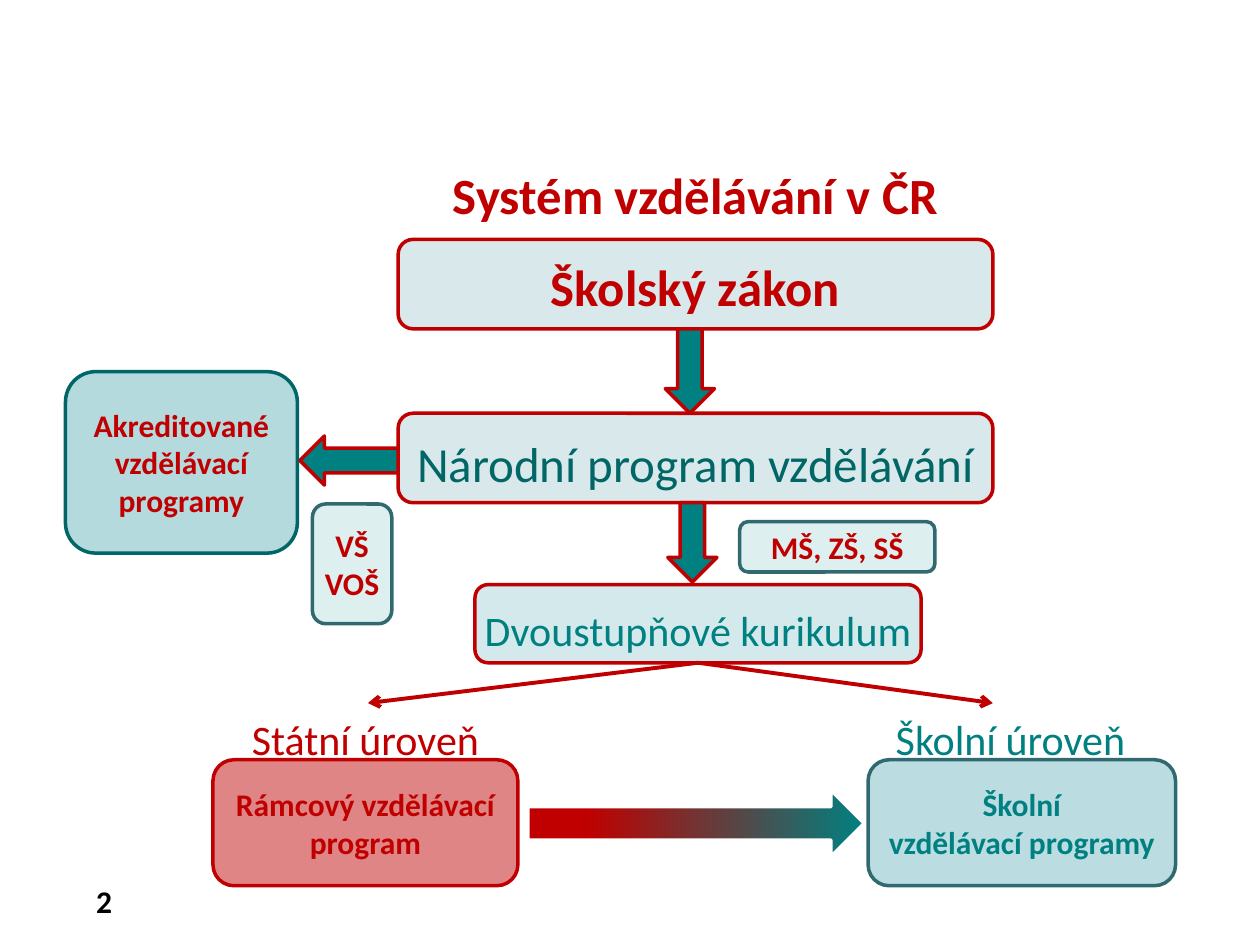
from dataclasses import dataclass

import pptx
import pptx.dml.color
import pptx.enum.shapes
import pptx.enum.text
import pptx.oxml
import pptx.oxml.ns
import pptx.util
from pptx.util import Inches

SHAPE = pptx.enum.shapes.MSO_SHAPE
ALIGN = pptx.enum.text.PP_ALIGN
ANCHOR = pptx.enum.text.MSO_ANCHOR


@dataclass(frozen=True)
class Theme:
    font: str = "Calibri"
    red: str = "C00000"
    teal: str = "008080"
    dark_teal: str = "006666"
    slate: str = "30696F"
    steel: str = "418E96"
    aqua: str = "71B9C1"
    pale: str = "B4DADE"
    white: str = "FFFFFF"
    black: str = "000000"
    title: int = 29
    program: int = 28
    level: int = 24
    body: int = 18
    border: float = 2
    branch: float = 2.25


THEME = Theme()


def rgb(color):
    return pptx.dml.color.RGBColor.from_string(color)


def write(frame, text, size, color, bold=True, align=ALIGN.CENTER, top=0):
    """Fill a frame with one paragraph per line of text."""
    frame.word_wrap = True
    frame.vertical_anchor = ANCHOR.MIDDLE
    frame.margin_left = frame.margin_right = frame.margin_bottom = 0
    frame.margin_top = Inches(top)
    for number, line in enumerate(text.split("\n")):
        para = frame.add_paragraph() if number else frame.paragraphs[0]
        para.text = line
        para.alignment = align
        para.font.name = THEME.font
        para.font.size = pptx.util.Pt(size)
        para.font.bold = bold
        para.font.color.rgb = rgb(color)


def add_label(page, box, text, size, color, **style):
    label = page.shapes.add_textbox(*map(Inches, box))
    write(label.text_frame, text, size, color, **style)


def add_figure(page, kind, box, fill, line, opacity=100):
    """Add a bordered preset shape; opacity is in percent."""
    figure = page.shapes.add_shape(kind, *map(Inches, box))
    figure.shadow.inherit = False
    figure.fill.solid()
    figure.fill.fore_color.rgb = rgb(fill)
    if opacity < 100:
        color = figure.fill._xPr.find(".//" + pptx.oxml.ns.qn("a:srgbClr"))
        alpha = color.makeelement(pptx.oxml.ns.qn("a:alpha"), {"val": str(opacity * 1000)})
        color.append(alpha)
    figure.line.color.rgb = rgb(line)
    figure.line.width = pptx.util.Pt(THEME.border)
    return figure


def add_card(page, box, fill, line, opacity, text, size, color, **style):
    card = add_figure(page, SHAPE.ROUNDED_RECTANGLE, box, fill, line, opacity)
    write(card.text_frame, text, size, color, **style)


def add_branch(page, start, end):
    branch = page.shapes.add_connector(
        pptx.enum.shapes.MSO_CONNECTOR.STRAIGHT, *map(Inches, start + end))
    branch.line.color.rgb = rgb(THEME.red)
    branch.line.width = pptx.util.Pt(THEME.branch)
    line = branch.line._get_or_add_ln()
    line.append(line.makeelement(pptx.oxml.ns.qn("a:tailEnd"), {"type": "arrow"}))
    properties = branch._element.spPr
    properties.append(properties.makeelement(pptx.oxml.ns.qn("a:effectLst"), {}))


def add_hierarchy(page, box):
    """Stack the law, the national program and the curriculum, then branch out."""
    left, top, width, height = box
    bar = 0.71
    program_top = top + 1.38
    curriculum = (left + 0.61, top + 2.74, 3.54, 0.62)
    add_label(page, (left, top - 0.63, width, 0.55), "Systém vzdělávání v ČR",
              THEME.title, THEME.red)
    add_card(page, (left, top, width, bar), THEME.steel, THEME.red, 20,
             "Školský zákon", THEME.title, THEME.red, top=0.04)
    add_card(page, (left, program_top, width, bar), THEME.steel, THEME.red, 20,
             "Národní program vzdělávání", THEME.program, THEME.dark_teal, bold=False, top=0.08)
    add_card(page, curriculum, THEME.aqua, THEME.red, 31,
             "Dvoustupňové kurikulum", THEME.level, THEME.teal, bold=False, top=0.1)
    for x, y, drop in ((2.12, top + bar, 0.67), (2.14, program_top + bar, 0.63)):
        add_figure(page, SHAPE.DOWN_ARROW, (left + x, y, 0.39, drop), THEME.teal, THEME.red)
    fork = (left + 2.38, top + height)
    for x in (-0.24, width):
        add_branch(page, fork, (left + x, fork[1] + 0.32))


def add_accredited(page, box):
    """Place the accredited programs and the arrow that leads to them."""
    left, top, width, height = box
    add_card(page, box, THEME.pale, THEME.dark_teal, 100,
             "Akreditované vzdělávací programy", THEME.body, THEME.red)
    add_figure(page, SHAPE.LEFT_ARROW, (left + width + 0.02, top + 0.51, 0.78, 0.39),
               THEME.teal, THEME.red)


def add_school_tag(page, box, text):
    add_card(page, box, THEME.pale, THEME.slate, 43, text, THEME.body, THEME.red)


def add_levels(page, box):
    """Place the state and school levels at both ends, joined by an arrow."""
    left, top, width, height = box
    levels = (
        (left, 2.42, "Státní úroveň", "Rámcový vzdělávací program",
         THEME.red, THEME.red, THEME.red, 0),
        (left + width - 2.44, 2.44, "Školní úroveň", "Školní\nvzdělávací programy",
         THEME.aqua, THEME.slate, THEME.teal, -0.09),
    )
    for x, card_width, heading, text, fill, line, color, shift in levels:
        add_label(page, (x + shift, top - 0.38, card_width, 0.42), heading,
                  THEME.level, color, bold=False)
        add_card(page, (x, top, card_width, height), fill, line, 48,
                 text, THEME.body, color)
    arrow = add_figure(page, SHAPE.RIGHT_ARROW, (left + 2.5, top + 0.24, 2.67, 0.53),
                       THEME.teal, THEME.white)
    arrow.fill.gradient()
    arrow.fill.gradient_angle = 0
    stops = ((0.17, THEME.red), (1, THEME.teal))
    for stop, (position, color) in zip(arrow.fill.gradient_stops, stops):
        stop.position = position
        stop.color.rgb = rgb(color)


def main():
    deck = pptx.Presentation()
    deck.slide_width, deck.slide_height = Inches(10), Inches(7.5)
    page = deck.slides.add_slide(deck.slide_layouts[6])
    add_hierarchy(page, (3.16, 1.9, 4.72, 3.36))
    add_accredited(page, (0.52, 2.95, 1.84, 1.44))
    add_school_tag(page, (2.48, 4, 0.63, 0.95), "VŠ\nVOŠ")
    add_school_tag(page, (5.87, 4.14, 1.55, 0.4), "MŠ, ZŠ, SŠ")
    add_levels(page, (1.69, 6.03, 7.64, 1))
    add_label(page, (0.28, 6.95, 0.61, 0.4), "2", THEME.body, THEME.black, align=ALIGN.RIGHT)
    deck.save("out.pptx")


if __name__ == "__main__":
    main()
